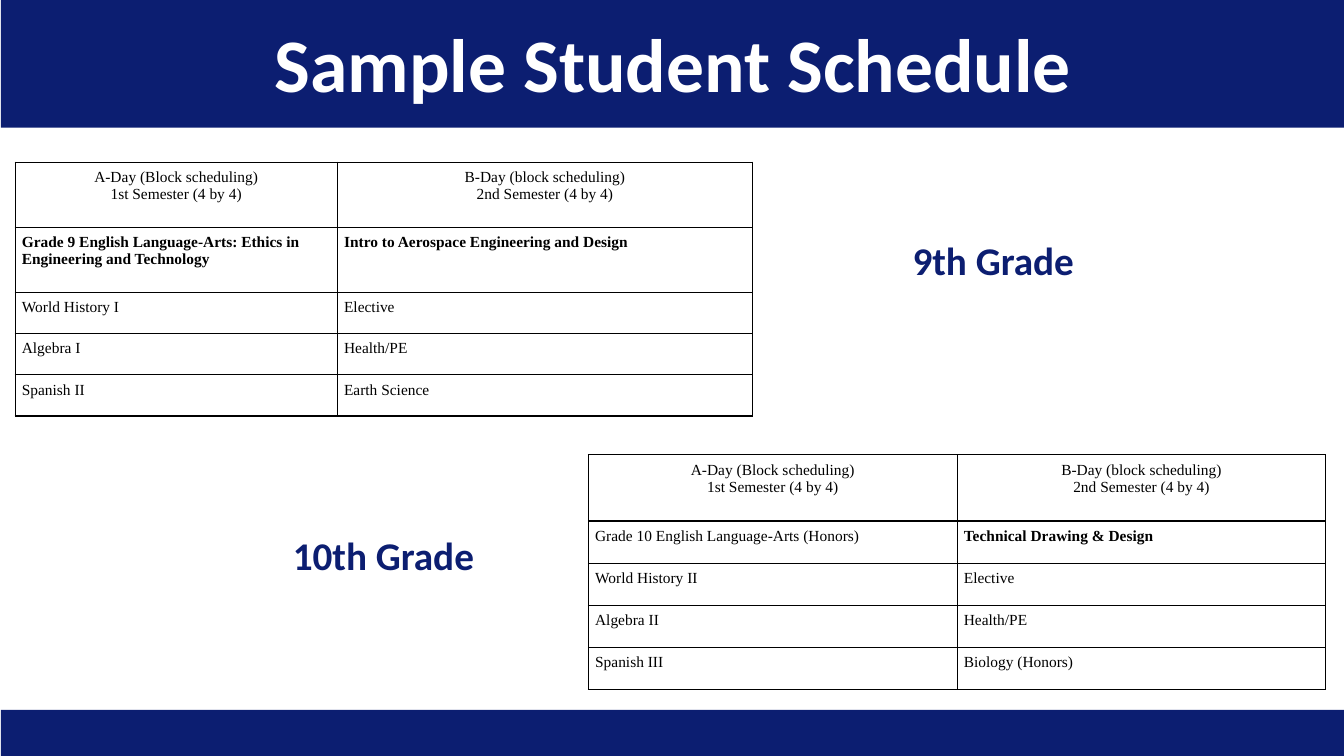
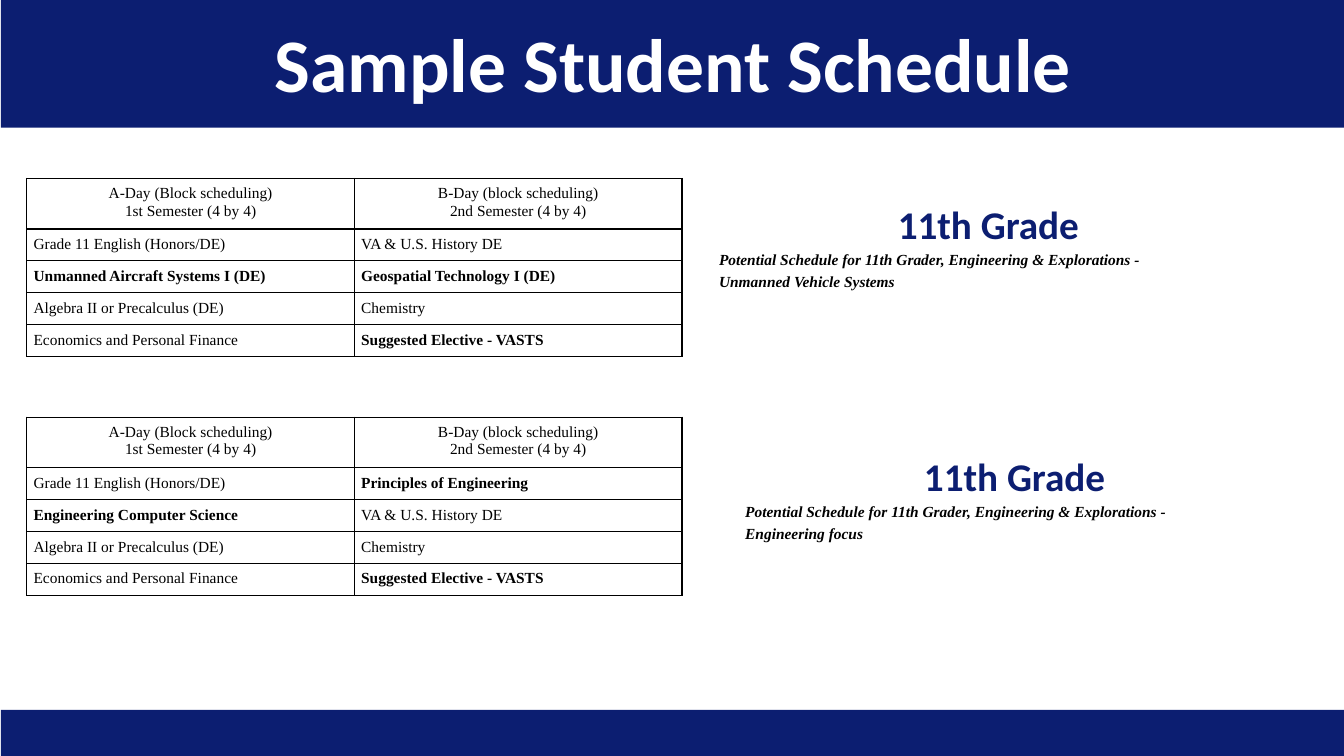
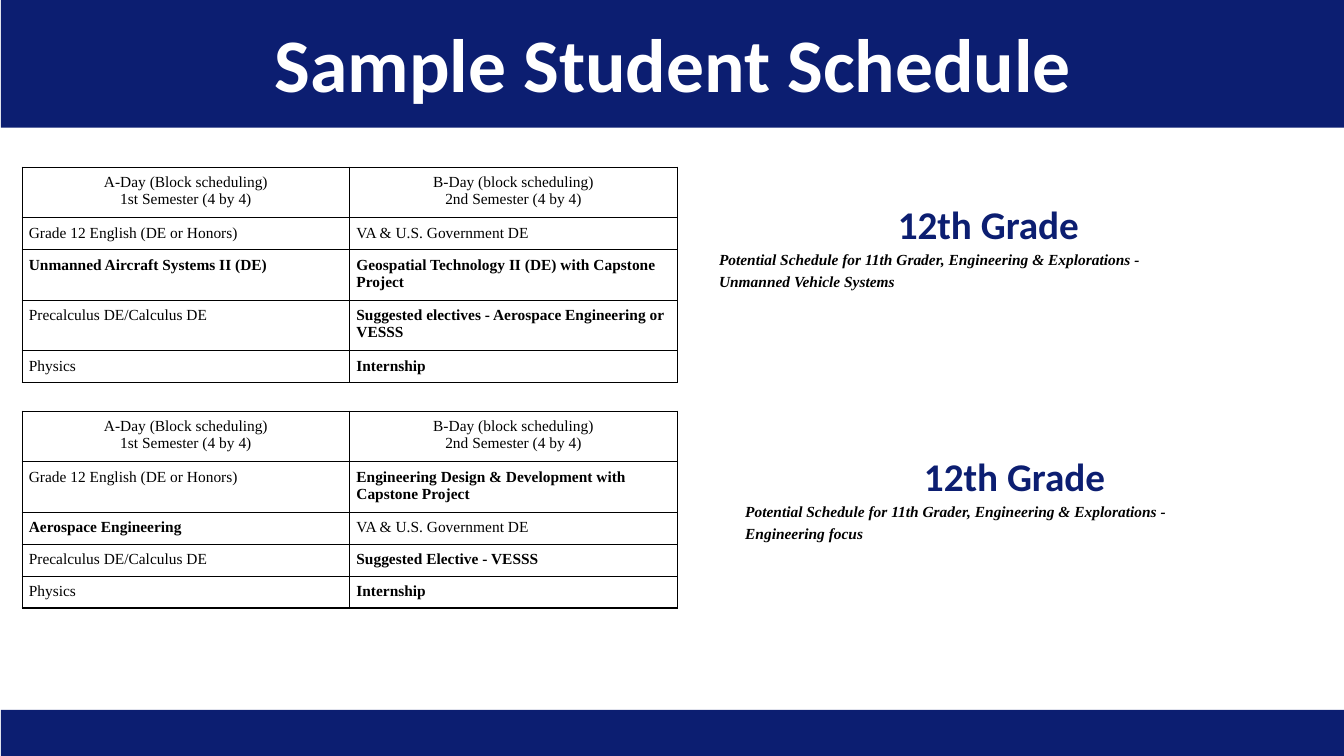
from dataclasses import dataclass

from lxml.etree import SubElement
from pptx import Presentation
from pptx.dml.color import RGBColor
from pptx.enum.shapes import MSO_SHAPE as Preset
from pptx.enum.text import MSO_ANCHOR as Anchor, PP_ALIGN as Align
from pptx.oxml.ns import qn
from pptx.util import Pt


@dataclass(frozen=True)
class Theme:
    navy: RGBColor = RGBColor(0x0C, 0x1E, 0x71)
    white: RGBColor = RGBColor(0xFF, 0xFF, 0xFF)
    black: RGBColor = RGBColor(0, 0, 0)
    heading_font: str = "Calibri"
    body_font: str = "Times New Roman"
    title_size: int = 54
    grade_size: int = 28
    body_size: int = 11
    inset_x: float = 9.6
    inset_y: float = 4.8
    border: float = 1
    line_spacing: float = 1.15


theme = Theme()

TITLE = "Sample Student Schedule"
HEADER = ("A-Day (Block scheduling)\n1st Semester (4 by 4)",
          "B-Day (block scheduling)\n2nd Semester (4 by 4)")
FOCUS_INTRO = "Potential Schedule for 11th Grader, Engineering & Explorations -"
VEHICLES = (FOCUS_INTRO, "Unmanned Vehicle Systems")
ENGINEERING = (FOCUS_INTRO, "Engineering focus")

# Row heights for one and two lines of text
ONE, TWO = 22.3, 35
EVEN_COLUMNS = (234, 234)
UPPER_LABEL = (504, 131, 404, 88.6)
LOWER_LABEL = (522.7, 311, 404, 88.6)

# Each schedule: grade, focus lines, label box, table corner, column widths,
# row heights and courses; a leading * marks a course set in bold
slides = [
    [
        ("9th Grade", (), (440.6, 141.1, 537.8, 88.6),
         (10.8, 115.9), (230.2, 296.6), (46.4, 46.4, 29.5, 29.5, 29.5), [
            ("*Grade 9 English Language-Arts: Ethics in Engineering and Technology",
             "*Intro to Aerospace Engineering and Design"),
            ("World History I", "Elective"),
            ("Algebra I", "Health/PE"),
            ("Spanish II", "Earth Science"),
        ]),
        ("10th Grade", (), (5, 352, 537.8, 88.6),
         (420.3, 324.8), (263.4, 263.4), (47.4, 30.1, 30.1, 30.1, 30.1), [
            ("Grade 10 English Language-Arts (Honors)", "*Technical Drawing & Design"),
            ("World History II", "Elective"),
            ("Algebra II", "Health/PE"),
            ("Spanish III", "Biology (Honors)"),
        ]),
    ],
    [
        ("11th Grade", VEHICLES, UPPER_LABEL,
         (19.2, 127.5), EVEN_COLUMNS, (TWO, ONE, ONE, ONE, ONE), [
            ("Grade 11 English (Honors/DE)", "VA & U.S. History DE"),
            ("*Unmanned Aircraft Systems I (DE)", "*Geospatial Technology I (DE)"),
            ("Algebra II or Precalculus (DE)", "Chemistry"),
            ("Economics and Personal Finance", "*Suggested Elective - VASTS"),
        ]),
        ("11th Grade", ENGINEERING, LOWER_LABEL,
         (19.2, 298), EVEN_COLUMNS, (TWO, ONE, ONE, ONE, ONE), [
            ("Grade 11 English (Honors/DE)", "*Principles of Engineering"),
            ("*Engineering Computer Science", "VA & U.S. History DE"),
            ("Algebra II or Precalculus (DE)", "Chemistry"),
            ("Economics and Personal Finance", "*Suggested Elective - VASTS"),
        ]),
    ],
    [
        ("12th Grade", VEHICLES, UPPER_LABEL,
         (15.8, 119.5), EVEN_COLUMNS, (TWO, ONE, TWO, TWO, ONE), [
            ("Grade 12 English (DE or Honors)", "VA & U.S. Government DE"),
            ("*Unmanned Aircraft Systems II (DE)",
             "*Geospatial Technology II (DE) with Capstone Project"),
            ("Precalculus DE/Calculus DE",
             "*Suggested electives - Aerospace Engineering or VESSS"),
            ("Physics", "*Internship"),
        ]),
        ("12th Grade", ENGINEERING, LOWER_LABEL,
         (15.8, 293.8), EVEN_COLUMNS, (TWO, TWO, ONE, ONE, ONE), [
            ("Grade 12 English (DE or Honors)",
             "*Engineering Design & Development with Capstone Project"),
            ("*Aerospace Engineering", "VA & U.S. Government DE"),
            ("Precalculus DE/Calculus DE", "*Suggested Elective - VESSS"),
            ("Physics", "*Internship"),
        ]),
    ],
]


def add_line(frame, text, size, color, font, bold=True, italic=False,
             align=Align.CENTER, spacing=None):
    """Write one paragraph, using the frame's first one while it is empty."""
    first = frame.paragraphs[0]
    paragraph = frame.add_paragraph() if first.runs else first
    paragraph.alignment = align
    if spacing:
        paragraph.line_spacing = spacing
    run = paragraph.add_run()
    run.text = text
    run.font.size = Pt(size)
    run.font.color.rgb = color
    run.font.name = font
    run.font.bold = bold
    run.font.italic = italic


def add_text_box(slide, box):
    """Add a wrapped, vertically centred text box and return its frame."""
    frame = slide.shapes.add_textbox(*map(Pt, box)).text_frame
    frame.word_wrap = True
    frame.vertical_anchor = Anchor.MIDDLE
    frame.margin_left = frame.margin_right = Pt(theme.inset_x)
    frame.margin_top = frame.margin_bottom = Pt(theme.inset_y)
    return frame


deck = Presentation()
deck.slide_width, deck.slide_height = Pt(960), Pt(540)

for schedules in slides:
    slide = deck.slides.add_slide(deck.slide_layouts[6])

    # Title and footer bands
    for top, height in ((0, 91.2), (507, 33)):
        band = slide.shapes.add_shape(Preset.RECTANGLE, Pt(0.6), Pt(top), Pt(959.4), Pt(height))
        band.shadow.inherit = False
        band.fill.solid()
        band.fill.fore_color.rgb = theme.navy
        band.line.fill.background()
    add_line(add_text_box(slide, (10.8, 0, 940.3, 88.6)), TITLE,
             theme.title_size, theme.white, theme.heading_font)

    for grade, focus, label_box, corner, widths, heights, courses in schedules:
        # Schedule table
        rows = [HEADER, *courses]
        schedule = slide.shapes.add_table(
            len(rows), len(widths), *map(Pt, corner), Pt(sum(widths)), Pt(sum(heights))).table
        schedule.first_row = schedule.horz_banding = False
        for column, width in zip(schedule.columns, widths):
            column.width = Pt(width)
        for row, height, entries in zip(schedule.rows, heights, rows):
            row.height = Pt(height)
            for cell, entry in zip(row.cells, entries):
                cell.margin_left = cell.margin_right = Pt(theme.inset_y)
                cell.margin_top = cell.margin_bottom = Pt(theme.inset_y)
                for text in entry.removeprefix("*").split("\n"):
                    add_line(cell.text_frame, text, theme.body_size, theme.black,
                             theme.body_font, bold=entry.startswith("*"),
                             align=Align.CENTER if entries is HEADER else Align.LEFT)

                # Cell borders come before the fill in the cell properties
                properties = cell._tc.get_or_add_tcPr()
                for side in ("a:lnL", "a:lnR", "a:lnT", "a:lnB"):
                    border = SubElement(properties, qn(side), w=str(Pt(theme.border)))
                    paint = SubElement(border, qn("a:solidFill"))
                    SubElement(paint, qn("a:srgbClr"), val=str(theme.black))
                cell.fill.solid()
                cell.fill.fore_color.rgb = theme.white

        # Grade label with its focus
        label = add_text_box(slide, label_box)
        add_line(label, grade, theme.grade_size, theme.navy, theme.heading_font)
        for text in focus:
            add_line(label, text, theme.body_size, theme.black, theme.body_font,
                     italic=True, align=Align.LEFT, spacing=theme.line_spacing)

deck.save("out.pptx")
